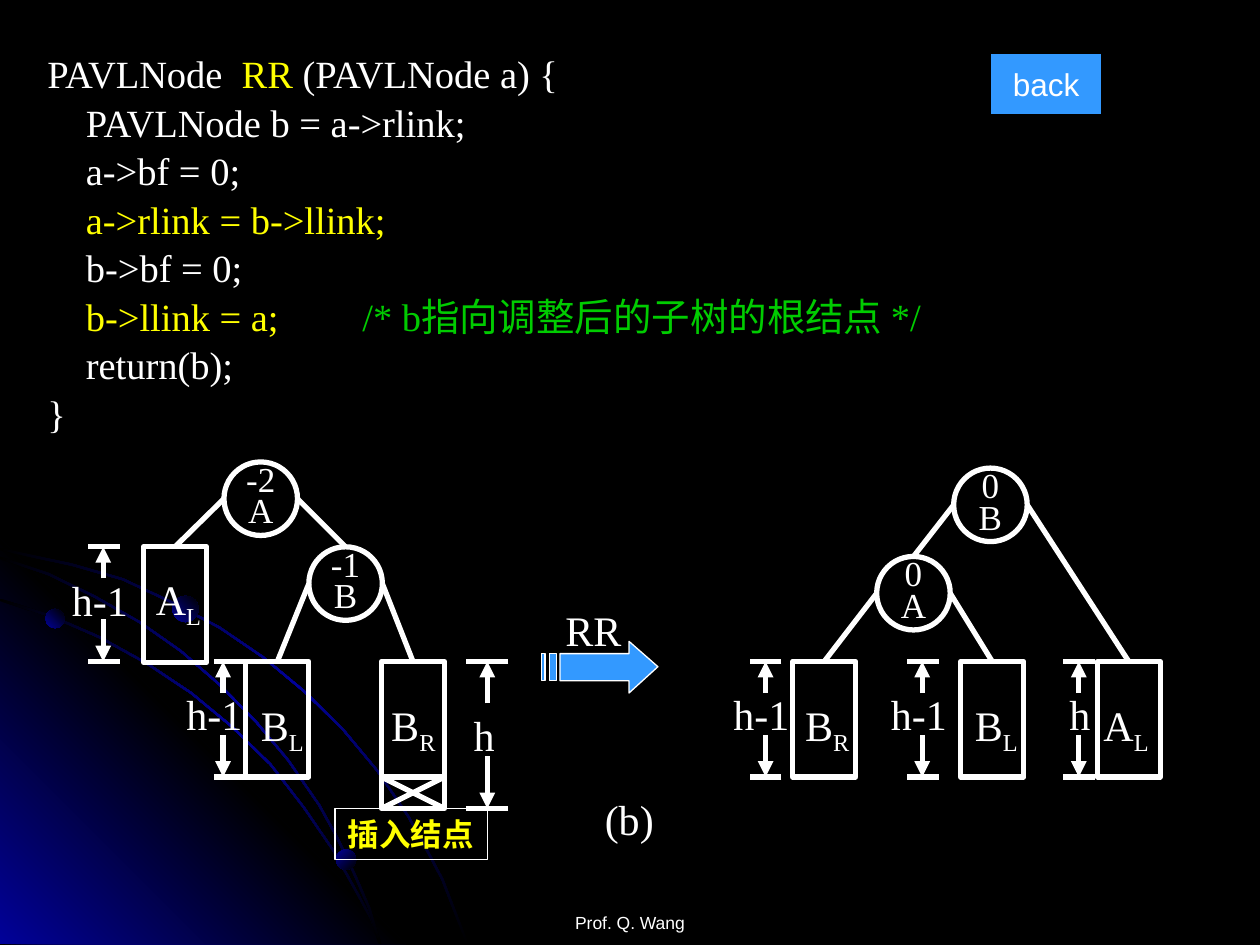
from itertools import pairwise
from typing import Any, NamedTuple

from lxml import etree
from pptx import Presentation
from pptx import util as u
from pptx.dml.color import RGBColor
from pptx.enum import shapes, text
from pptx.oxml.ns import qn

WHITE = RGBColor(0xFF, 0xFF, 0xFF)
BLACK = RGBColor(0, 0, 0)
NAVY = RGBColor(0x01, 0x01, 0x99)
BLUE = RGBColor(0x33, 0x99, 0xFF)
YELLOW = RGBColor(0xFF, 0xFF, 0)
GREEN = RGBColor(0, 0xCC, 0)
Point = tuple[float, float]
KIND = shapes.MSO_SHAPE
ALIGN = text.PP_ALIGN


class Run(NamedTuple):
    words: str
    color: RGBColor = WHITE
    base: int = 0


class Node(NamedTuple):
    name: str
    left: float
    top: float
    factor: str
    letter: str


class Tree(NamedTuple):
    name: str
    left: float
    top: float
    high: float
    letter: str
    sub: str
    shift: float
    drop: float


class Edge(NamedTuple):
    start: str
    side: int
    end: str


class Gauge(NamedTuple):
    left: float
    top: float
    foot: float
    wide: float
    mid: float
    label: str
    text_x: float
    drop: float


deck = Presentation()
deck.slide_width, deck.slide_height = u.Pt(720), u.Pt(540)
slide = deck.slides.add_slide(deck.slide_layouts[6])
slide.background.fill.solid()
slide.background.fill.fore_color.rgb = BLACK


def put(item: Any, vals: dict[str, Any]) -> None:
    for key, val in vals.items():
        setattr(item, key, val)


def say(shape: Any, lines: list[list[Run]], size: float, para: dict | None = None,
        frame: dict | None = None, font: dict | None = None) -> None:
    body = shape.text_frame
    put(body, {"word_wrap": False, "vertical_anchor": text.MSO_ANCHOR.TOP} | (frame or {}))
    for i, line in enumerate(lines):
        par = body.add_paragraph() if i else body.paragraphs[0]
        put(par, {"alignment": ALIGN.LEFT} | (para or {}))
        for part in line:
            run = par.add_run()
            run.text = part.words
            put(run.font, {"size": u.Pt(size), "name": "Times New Roman"} | (font or {}))
            run.font.color.rgb = part.color
            if part.base:
                run.font._element.set("baseline", str(part.base))


def note(x: float, y: float, w: float, h: float, lines: list[list[Run]],
         size: float = 24, **style: dict) -> Any:
    box = slide.shapes.add_textbox(*map(u.Pt, (x, y, w, h)))
    say(box, lines, size, **style)
    return box


def paint(shape: Any, fill: RGBColor | None, width: float) -> None:
    shape.shadow.inherit = False
    if fill is None:
        shape.fill.background()
    else:
        shape.fill.solid()
        shape.fill.fore_color.rgb = fill
    if width:
        shape.line.color.rgb = WHITE
        shape.line.width = u.Pt(width)
    else:
        shape.line.fill.background()


def form(kind: Any, x: float, y: float, w: float, h: float,
         fill: RGBColor | None = None, width: float = 3) -> Any:
    shape = slide.shapes.add_shape(kind, *map(u.Pt, (x, y, w, h)))
    paint(shape, fill, width)
    return shape


def trace(loops: list[list[Point]]) -> Any:
    paths = [[(u.Pt(x), u.Pt(y)) for x, y in loop] for loop in loops]
    pen = slide.shapes.build_freeform(*paths[0][0])
    for i, path in enumerate(paths):
        if i:
            pen.move_to(*path[0])
        pen.add_line_segments(path[1:], close=True)
    return pen.convert_to_shape()


def shade(shape: Any, angle: float, colors: list[RGBColor]) -> None:
    paint(shape, None, 0)
    shape.fill.gradient()
    shape.fill.gradient_angle = angle
    stops = shape.element.spPr.find(qn("a:gradFill")).find(qn("a:gsLst"))
    for stop in list(stops):
        stops.remove(stop)
    for i, color in enumerate(colors):
        stop = etree.SubElement(stops, qn("a:gs"), pos=str(100000 * i // (len(colors) - 1)))
        etree.SubElement(stop, qn("a:srgbClr"), val=str(color))


def band(edge: list[Point]) -> list[Point]:
    last = len(edge) - 1
    under = [(x - 1.5 * i / last, y + 1.5 * (1 - i / last)) for i, (x, y) in enumerate(edge)]
    return edge + under[::-1]


def rule(start: Point, end: Point, head: bool = False) -> Any:
    line = slide.shapes.add_connector(shapes.MSO_CONNECTOR.STRAIGHT, *map(u.Pt, start + end))
    line.line.color.rgb = WHITE
    line.line.width = u.Pt(3)
    props = line.element.spPr
    if head:
        etree.SubElement(props.find(qn("a:ln")), qn("a:tailEnd"), type="triangle")
    etree.SubElement(props, qn("a:effectLst"))
    return line


def gauge(g: Gauge) -> None:
    for y in (g.top, g.foot):
        rule((g.left + g.wide, y), (g.left, y))
    note(g.text_x, g.top + g.drop, 47 if "-" in g.label else 26.5, 36, [[Run(g.label)]])
    rule((g.mid, g.foot - g.wide - 6), (g.mid, g.foot), True)
    rule((g.mid, g.top + g.wide), (g.mid, g.top), True)


ARCS = [
    [(0, 313), (20, 317.5), (41, 322), (70.5, 330.5), (98, 343.5), (125.5, 358), (150.5, 375),
     (174, 394.5), (196, 416), (216, 440), (234, 466.5), (244, 484.5), (253.5, 502.5),
     (260.5, 520.5), (268, 539.5)],
    [(0, 342), (29.5, 351.5), (57, 363.5), (84, 378.5), (109.5, 395.5), (132.5, 414.5),
     (155, 436.5), (174, 461), (191.5, 486.5), (206, 512.5), (213, 525.5), (218, 539.5)],
    [(0, 318), (28, 327.5), (54.5, 340.5), (80, 355), (103.5, 371.5), (126, 391), (147, 412.5),
     (165, 434), (183, 460), (193.5, 479), (203, 499), (211.5, 518.5), (218, 539.5)],
]
shade(trace([[(232, 539.5), (0, 539.5), (0, 307.5)]]), 45, [NAVY, BLACK, NAVY])
for arc in ARCS:
    shade(trace([band(arc)]), 315, [BLACK, NAVY, BLACK])
for x, y, size, angle in [(26, 348, 11, 45), (192, 485.5, 11.5, 315), (98.5, 340.5, 15, 45)]:
    shade(form(KIND.OVAL, x, y, size, size), angle, [NAVY, BLACK])

CODE = [
    [Run("PAVLNode  "), Run("RR", YELLOW), Run(" (PAVLNode a) {")],
    [Run("PAVLNode b = a->rlink;")],
    [Run("a->bf = 0;")],
    [Run("a->rlink = b->llink;", YELLOW)],
    [Run("b->bf = 0;")],
    [Run("b->llink = a;\t\t", YELLOW), Run("/* b指向调整后的子树的根结点 */", GREEN)],
    [Run("return(b);")],
    [Run("}")],
]
code = note(20, 24, 680, 220, CODE, 22, frame={"word_wrap": True},
            para={"alignment": ALIGN.JUSTIFY, "line_spacing": 1.05})
for par in code.text_frame.paragraphs[1:-1]:
    put_in = par._p.get_or_add_pPr()
    put_in.set("marL", "0")
    put_in.set("indent", str(u.Pt(22)))

MIDDLE = {"vertical_anchor": text.MSO_ANCHOR.MIDDLE}
CENTER = {"alignment": ALIGN.CENTER}
back = form(KIND.ACTION_BUTTON_CUSTOM, 566.5, 31, 62.5, 34, BLUE, 0)
say(back, [[Run("back")]], 18, CENTER, MIDDLE, {"name": "Arial"})

NODES = [Node("A1", 128, 264, "-2", "A"), Node("B1", 176.5, 312.5, "-1", "B"),
         Node("A2", 501, 318, "0", "A"), Node("B2", 545, 267.5, "0", "B")]
TREES = [Tree("AL1", 82, 312.5, 66, "A", "L", 0, 11.5),
         Tree("BL1", 140.5, 378, 66, "B", "L", 1.5, 18),
         Tree("BR1", 218, 378, 84, "B", "R", -1.5, 18),
         Tree("BR2", 453, 378, 66, "B", "R", 0, 18),
         Tree("BL2", 549, 378, 66, "B", "L", 1, 18),
         Tree("AL2", 627, 378, 66, "A", "L", -3.5, 18)]
EDGES = [Edge("A1", 0, "AL1"), Edge("A1", 1, "B1"), Edge("B1", 0, "BL1"), Edge("B1", 1, "BR1"),
         Edge("B2", 0, "A2"), Edge("B2", 1, "AL2"), Edge("A2", 0, "BR2"), Edge("A2", 1, "BL2")]
GAUGES = [Gauge(50.5, 312.5, 378, 18, 59, "h-1", 34, 12),
          Gauge(122.5, 378, 444, 18, 127.5, "h-1", 99.5, 12),
          Gauge(266.5, 378, 462, 24, 278.5, "h", 263.5, 24),
          Gauge(428.5, 378, 444, 18, 437.5, "h-1", 412, 12),
          Gauge(518.5, 378, 444, 18, 527, "h-1", 502, 12),
          Gauge(607.5, 378, 444, 18, 616.5, "h", 604, 12)]
DIAM = 42
parts: dict[str, Any] = {}
for n in NODES:
    parts[n.name] = form(KIND.OVAL, n.left, n.top, DIAM, DIAM)
    say(parts[n.name], [[Run(n.factor)], [Run(n.letter)]], 20,
        CENTER | {"line_spacing": 0.75}, MIDDLE)
for t in TREES:
    parts[t.name] = form(KIND.RECTANGLE, t.left, t.top, 36, t.high)
    note(t.left + t.shift, t.top + t.drop, 41, 36, [[Run(t.letter), Run(t.sub, base=-25000)]])
spots = {n.name: n for n in NODES}
for e in EDGES:
    n = spots[e.start]
    start = (n.left + e.side * DIAM, n.top + DIAM / 2)
    rule(start, start).end_connect(parts[e.end], 0)
for start, end in pairwise([(218, 462), (254, 444), (218, 444), (254, 462)]):
    rule(start, end)
for g in GAUGES:
    gauge(g)

insert = form(KIND.RECTANGLE, 191.5, 462, 87, 29, None, 0.75)
say(insert, [[Run("插入结点", YELLOW)]], 18, frame={"word_wrap": True}, font={"bold": True})

bars = [[(x, 373.5), (x, 389), (x + w, 389), (x + w, 373.5)] for x, w in [(314, 2), (309.5, 2)]]
arrow = [(359.5, 366.5), (359.5, 373.5), (320, 373.5), (320, 389), (359.5, 389),
         (359.5, 396), (376, 381)]
bars[0] = [(x + 2 * (x > 314), y) for x, y in bars[0]]
paint(trace([arrow, *bars]), BLUE, 0.75)
note(316, 342, 47, 36, [[Run("RR")]])
note(338.5, 450, 42.5, 36, [[Run("(b)")]])
note(246, 497, 228, 36, [[Run("Prof. Q. Wang")]], 10, para=CENTER, font={"name": "Arial"},
     frame={"word_wrap": True, "vertical_anchor": text.MSO_ANCHOR.BOTTOM, "margin_bottom": 0})
deck.save("out.pptx")
